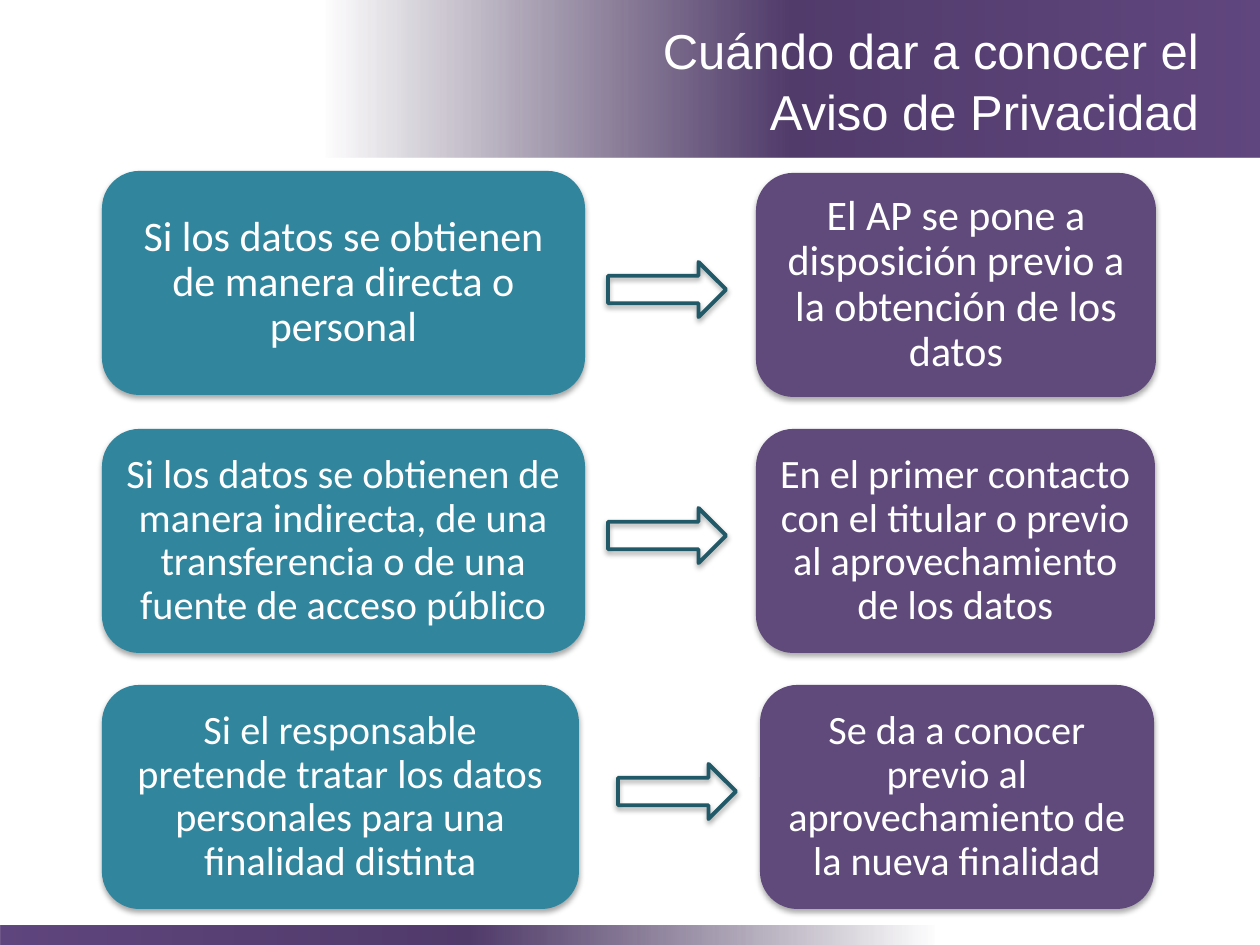
from lxml import etree
from pptx import Presentation, util as u
from pptx.dml.color import RGBColor
from pptx.enum import shapes, text
from pptx.oxml import parse_xml
from pptx.oxml.ns import nsdecls, qn

COLOURS = {
    "band_dark": "39294B",
    "band_mid": "513B6B",
    "band_light": "60467E",
    "case": "31859C",
    "answer": "604A7B",
    "arrow": "215968",
    "white": "FFFFFF",
    "shadow": "000000",
}
BOX_HEIGHT = 224
ARROW_SIZE = (118, 55)

# Each row: text size, case box, arrow and answer box.
# Boxes are (left, top, width, text); arrows are (left, top).
ROWS = [
    (24, (102, 171, 483, "Si los datos se obtienen de manera directa o personal"),
     (608, 262),
     (756, 173, 400, "El AP se pone a disposición previo a la obtención de los datos")),
    (23, (102, 429, 483, "Si los datos se obtienen de manera indirecta, de una "
                         "transferencia o de una fuente de acceso público"),
     (608, 508),
     (756, 429, 399, "En el primer contacto con el titular o previo al "
                     "aprovechamiento de los datos")),
    (23, (102, 685, 477, "Si el responsable pretende tratar los datos personales "
                         "para una finalidad distinta"),
     (618, 764),
     (760, 685, 394, "Se da a conocer previo al aprovechamiento de la nueva finalidad")),
]


def px(length):
    return u.Emu(round(length * 914400 / 126))


def rgb(name):
    return RGBColor.from_string(COLOURS[name])


class Painter:
    """Holds the style and the page being drawn."""

    def __init__(self, page):
        self.page = page

    def shape(self, kind, left, top, width, height):
        shape = self.page.shapes.add_shape(
            kind, px(left), px(top), px(width), px(height))
        shape.shadow.inherit = False
        return shape

    def band(self, left, top, width, height, rotation=0):
        """Draw a bar that fades in from clear to purple."""
        band = self.shape(shapes.MSO_SHAPE.RECTANGLE, left, top, width, height)
        band.rotation = rotation
        band.line.fill.background()
        band.fill.background()
        stops = "".join(
            f'<a:gs pos="{position}"><a:srgbClr val="{COLOURS[name]}">'
            f'<a:alpha val="{alpha}"/></a:srgbClr></a:gs>'
            for position, name, alpha in [(0, "band_dark", 0),
                                          (50000, "band_mid", 100000),
                                          (100000, "band_light", 100000)])
        gradient = parse_xml(
            f'<a:gradFill {nsdecls("a")} rotWithShape="1"><a:gsLst>{stops}</a:gsLst>'
            '<a:lin ang="0" scaled="0"/></a:gradFill>')
        properties = band._element.spPr
        properties.replace(properties.find(qn("a:noFill")), gradient)

    def drop_shadow(self, shape):
        effects = shape._element.spPr.find(qn("a:effectLst"))
        shadow = etree.SubElement(
            effects, qn("a:outerShdw"), blurRad="40000", dist="23000",
            dir="5400000", rotWithShape="0")
        colour = etree.SubElement(shadow, qn("a:srgbClr"), val=COLOURS["shadow"])
        etree.SubElement(colour, qn("a:alpha"), val="35000")

    def add_words(self, shape, words, font, size, align, spacing):
        frame = shape.text_frame
        frame.word_wrap = True
        frame.vertical_anchor = text.MSO_ANCHOR.MIDDLE
        para = frame.paragraphs[0]
        para.alignment = align
        para.line_spacing = spacing
        span = para.add_run()
        span.text = words
        span.font.name = font
        span.font.size = u.Pt(size)
        span.font.color.rgb = rgb("white")

    def title(self, left, top, width, height, words):
        box = self.page.shapes.add_textbox(
            px(left), px(top), px(width), px(height))
        self.add_words(box, words, "Arial", 28, text.PP_ALIGN.RIGHT, 1.05)

    def card(self, left, top, width, words, colour, size):
        card = self.shape(shapes.MSO_SHAPE.ROUNDED_RECTANGLE,
                          left, top, width, BOX_HEIGHT)
        card.fill.solid()
        card.fill.fore_color.rgb = rgb(colour)
        card.line.fill.background()
        self.drop_shadow(card)
        frame = card.text_frame
        frame.margin_left = frame.margin_right = px(12)
        frame.margin_top = frame.margin_bottom = px(12)
        self.add_words(card, words, "Calibri", size, text.PP_ALIGN.CENTER, 0.9)

    def arrow(self, left, top):
        arrow = self.shape(shapes.MSO_SHAPE.RIGHT_ARROW, left, top, *ARROW_SIZE)
        arrow.fill.background()
        arrow.line.color.rgb = rgb("arrow")
        arrow.line.width = u.Pt(2.25)
        self.drop_shadow(arrow)


def main():
    deck = Presentation()
    deck.slide_width, deck.slide_height = px(1260), px(945)
    painter = Painter(deck.slides.add_slide(deck.slide_layouts[6]))

    painter.band(325, 0, 935, 158)
    painter.band(0, 925, 935, 20, rotation=180)
    painter.title(640, 0, 571, 158, "Cuándo dar a conocer el Aviso de Privacidad")
    for size, case, arrow, answer in ROWS:
        painter.card(*case, "case", size)
        painter.arrow(*arrow)
        painter.card(*answer, "answer", size)

    deck.save("out.pptx")


if __name__ == "__main__":
    main()
